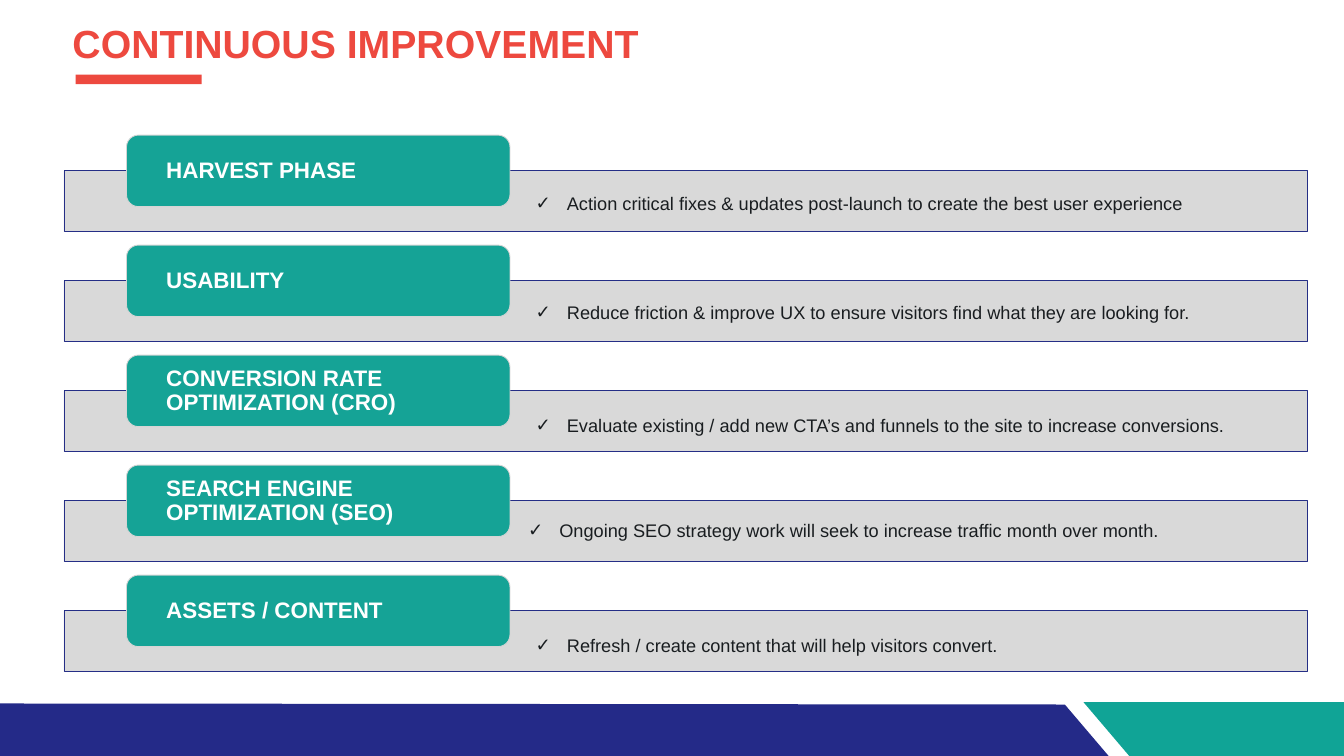
"""Build the Continuous Improvement slide with five labelled bars."""
from dataclasses import dataclass

from lxml import etree
from pptx import Presentation
from pptx.dml.color import RGBColor
from pptx.enum.shapes import MSO_SHAPE
from pptx.enum.text import MSO_ANCHOR, PP_ALIGN
from pptx.oxml.ns import qn
from pptx.shapes.autoshape import Shape
from pptx.slide import Slide
from pptx.text.text import _Paragraph
from pptx.util import Pt

RECTANGLE = MSO_SHAPE.RECTANGLE
ROUNDED = MSO_SHAPE.ROUNDED_RECTANGLE
MIDDLE = MSO_ANCHOR.MIDDLE
LEFT = PP_ALIGN.LEFT

RED = RGBColor(0xED, 0x49, 0x3F)
NAVY = RGBColor(0x24, 0x2A, 0x88)
BAR_LINE = RGBColor(0x25, 0x2E, 0x86)
GREEN = RGBColor(0x10, 0xA4, 0x96)
TEAL = RGBColor(0x15, 0xA3, 0x96)
GREY = RGBColor(0xD5, 0xD5, 0xD5)
INK = RGBColor(0x19, 0x1D, 0x20)
WHITE = RGBColor(0xFF, 0xFF, 0xFF)

FONT = "Arial"
SLIDE_WIDTH, SLIDE_HEIGHT = 1920.24, 1080
FIRST_TOP, ROW_PITCH = 193, 157.14
BAR_DROP = 51.1
HANGING_INDENT = 44.64


@dataclass(frozen=True)
class Box:
    left: float
    top: float
    width: float
    height: float


@dataclass(frozen=True)
class Stage:
    label: str
    action: str
    action_drop: float = 77.9
    action_left: float = 758.2


STAGES = (
    Stage("HARVEST PHASE",
          "Action critical fixes & updates post-launch to create the best user experience"),
    Stage("USABILITY",
          "Reduce friction & improve UX to ensure visitors find what they are looking for.",
          77.3),
    Stage("CONVERSION RATE OPTIMIZATION (CRO)",
          "Evaluate existing /\u00a0add new CTA’s and funnels to the site to increase conversions.",
          80.8),
    Stage("SEARCH ENGINE OPTIMIZATION (SEO)",
          "Ongoing SEO strategy work will seek to increase traffic month over month.",
          74.2, 747.4),
    Stage("ASSETS / CONTENT",
          "Refresh / create content that will help visitors convert.",
          80.6),
)


def paint(shape: Shape, fill: RGBColor, line: RGBColor | None = None) -> None:
    shape.shadow.inherit = False
    shape.fill.solid()
    shape.fill.fore_color.rgb = fill
    if line is None:
        shape.line.fill.background()
    else:
        shape.line.color.rgb = line
        shape.line.width = Pt(1.25)


def add_block(page: Slide, kind: MSO_SHAPE, box: Box, fill: RGBColor,
              line: RGBColor | None = None) -> Shape:
    shape = page.shapes.add_shape(
        kind, Pt(box.left), Pt(box.top), Pt(box.width), Pt(box.height))
    paint(shape, fill, line)
    return shape


def add_polygon(page: Slide, points: list[tuple[float, float]], fill: RGBColor) -> None:
    corners = [(Pt(x), Pt(y)) for x, y in points]
    builder = page.shapes.build_freeform(*corners[0], scale=1.0)
    builder.add_line_segments(corners[1:], close=True)
    paint(builder.convert_to_shape(), fill)


def write(shape: Shape, text: str, size: float, color: RGBColor,
          bold: bool = False) -> _Paragraph:
    frame = shape.text_frame
    frame.word_wrap = True
    frame.text = text
    para = frame.paragraphs[0]
    para.alignment = LEFT
    font = para.runs[0].font
    font.name, font.size, font.bold = FONT, Pt(size), bold
    font.color.rgb = color
    return para


def add_text(page: Slide, box: Box, text: str, size: float, color: RGBColor,
             bold: bool = False) -> _Paragraph:
    shape = page.shapes.add_textbox(
        Pt(box.left), Pt(box.top), Pt(box.width), Pt(box.height))
    return write(shape, text, size, color, bold)


def add_check(para: _Paragraph) -> None:
    properties = para._p.get_or_add_pPr()
    properties.set("marL", str(Pt(HANGING_INDENT)))
    properties.set("indent", str(-Pt(HANGING_INDENT)))
    etree.SubElement(properties, qn("a:buFont")).set("typeface", FONT)
    etree.SubElement(properties, qn("a:buChar")).set("char", "✓")


def add_stage(page: Slide, stage: Stage, top: float) -> None:
    bar = add_block(page, RECTANGLE, Box(91.4, top + BAR_DROP, 1776.24, 87.1),
                    GREY, BAR_LINE)
    bar_color = bar._element.spPr.find(qn("a:solidFill"))[0]
    etree.SubElement(bar_color, qn("a:alpha")).set("val", "90000")

    pill = add_block(page, ROUNDED, Box(180.7, top, 547.9, 102.2), TEAL, GREY)
    write(pill, stage.label, 32, WHITE, True).line_spacing = 0.9
    frame = pill.text_frame
    frame.vertical_anchor = MIDDLE
    frame.margin_left = frame.margin_right = Pt(51.8)
    frame.margin_top = frame.margin_bottom = 0

    action_box = Box(stage.action_left, top + stage.action_drop, 1144, 38.9)
    add_check(add_text(page, action_box, stage.action, 26, INK))


def main() -> None:
    deck = Presentation()
    deck.slide_width, deck.slide_height = Pt(SLIDE_WIDTH), Pt(SLIDE_HEIGHT)
    page = deck.slides.add_slide(deck.slide_layouts[6])

    add_polygon(page, [(0, 1005), (1521.4, 1006.5), (1584, SLIDE_HEIGHT),
                       (0, SLIDE_HEIGHT)], NAVY)
    add_polygon(page, [(1548, 1003), (SLIDE_WIDTH, 1003),
                       (SLIDE_WIDTH, SLIDE_HEIGHT), (1613.5, SLIDE_HEIGHT)], GREEN)
    add_text(page, Box(96.5, 23.8, 1776.24, 74.9), "CONTINUOUS IMPROVEMENT",
             56, RED, True)
    add_block(page, RECTANGLE, Box(108, 106.6, 180, 13.7), RED)
    for row, stage in enumerate(STAGES):
        add_stage(page, stage, FIRST_TOP + row * ROW_PITCH)

    deck.save("out.pptx")


if __name__ == "__main__":
    main()
